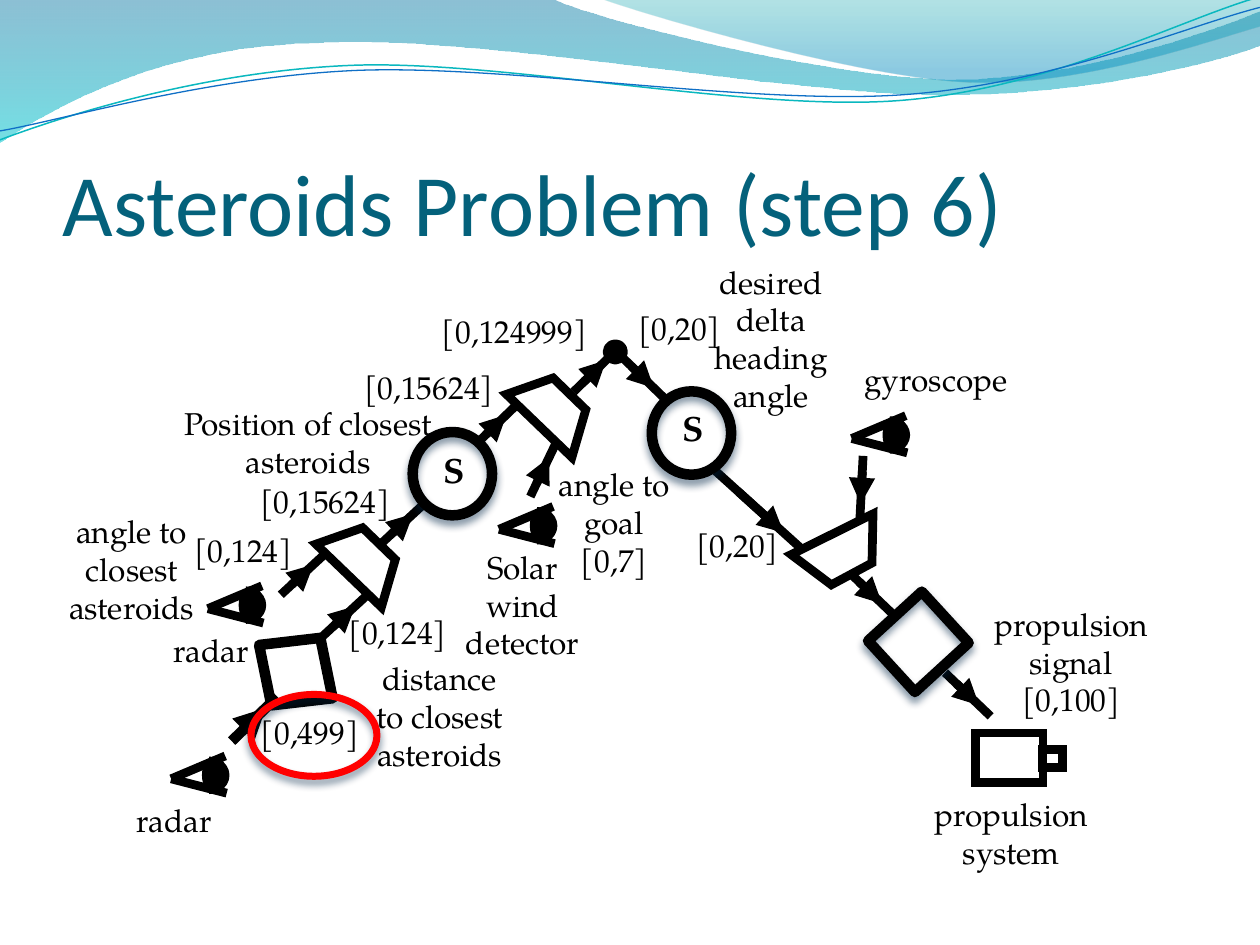
from lxml import etree
from pptx import Presentation
from pptx.dml.color import RGBColor
from pptx.enum.shapes import MSO_CONNECTOR, MSO_SHAPE
from pptx.enum.text import MSO_ANCHOR, PP_ALIGN
from pptx.oxml.ns import qn
from pptx.util import Cm, Pt

STRAIGHT = MSO_CONNECTOR.STRAIGHT
OVAL, RECT = MSO_SHAPE.OVAL, MSO_SHAPE.RECTANGLE
DIAMOND, ARC = MSO_SHAPE.DIAMOND, MSO_SHAPE.ARC
LEFT, CENTER = PP_ALIGN.LEFT, PP_ALIGN.CENTER
BLACK, WHITE = RGBColor(0, 0, 0), RGBColor(255, 255, 255)
RED = RGBColor(255, 0, 0)
TITLE_BLUE, SHADOW = RGBColor(0x04, 0x61, 0x7B), RGBColor(0x04, 0x27, 0x47)
DEEP_BLUE, AQUA = RGBColor(0x00, 0x74, 0xA1), RGBColor(0x00, 0xC6, 0xCF)
TEAL, SKY = RGBColor(0x00, 0xA1, 0xA9), RGBColor(0x00, 0x8B, 0xBF)
LINE_TEAL, LINE_BLUE = RGBColor(0x0A, 0xB8, 0xBF), RGBColor(0x0F, 0x6F, 0xC6)
BODY_FONT = "TeX Gyre Pagella"

prs = Presentation()
prs.slide_width, prs.slide_height = Cm(25.4), Cm(19.05)
slide = prs.slides.add_slide(prs.slide_layouts[6])
shapes = slide.shapes


def add_outline(start, steps, closed):
    """Draw a freeform; a step is one point (line) or three (Bézier curve)."""
    points = [(Cm(x), Cm(y)) for x, y in [start] + [pt for step in steps for pt in step]]
    builder = shapes.build_freeform(*points[0])
    builder.add_line_segments(points[1:], close=closed)
    s = builder.convert_to_shape()
    s.shadow.inherit = False
    segments = iter(list(s._element.iter(qn("a:lnTo"))))
    for step in steps:
        parts = [next(segments) for _ in step]
        if len(step) == 3:
            curve = etree.Element(qn("a:cubicBezTo"))
            parts[0].addprevious(curve)
            for part in parts:
                curve.append(part[0])
                part.getparent().remove(part)
    return s


def add_line(x1, y1, x2, y2, width, arrow=False):
    c = shapes.add_connector(STRAIGHT, Cm(x1), Cm(y1), Cm(x2), Cm(y2))
    c.line.color.rgb, c.line.width = BLACK, Pt(width)
    if arrow:
        etree.SubElement(c.line._get_or_add_ln(), qn("a:tailEnd"), type="triangle")
    etree.SubElement(c._element.spPr, qn("a:effectLst"))


# Waves across the top
waves = [
    ((0, 0), [((11.18, 0),),
              ((12.09, 0.43), (16.87, 1.6), (19.25, 1.6)),
              ((21.67, 1.6), (24.33, 0.66), (25.4, 0.23)),
              ((25.4, 0.91),),
              ((24.97, 1.12), (22.1, 1.93), (18.95, 1.91)),
              ((15.8, 1.91), (9.7, 0.71), (6.53, 0.86)),
              ((3.28, 0.91), (1.17, 2.11), (0, 2.87))],
     [(0, DEEP_BLUE, 45), (1, AQUA, 55)]),
    ((12.17, 0), [((12.93, 0.28), (17.32, 1.57), (19.53, 1.65)),
                  ((21.74, 1.75), (24.41, 0.81), (25.4, 0.53)),
                  ((25.4, 0),)],
     [(0, TEAL, 30), (0.8, SKY, 45)]),
]
for start, steps, stops in waves:
    s = add_outline(start, steps, True)
    s.line.fill.background()
    s.fill.gradient()
    s.fill.gradient_angle = 270
    for stop, (position, color, _) in zip(s.fill.gradient_stops, stops):
        stop.position, stop.color.rgb = position, color
    for clr, (_, _, opacity) in zip(s._element.spPr.iter(qn("a:srgbClr")), stops):
        etree.SubElement(clr, qn("a:alpha"), val=str(opacity * 1000))

wave_lines = [
    ((0, 2.82), [((1.22, 2.36), (4.01, 1.45), (7.04, 1.32)),
                 ((10.03, 1.19), (15.06, 2.26), (18.11, 2.03)),
                 ((21.16, 1.8), (23.83, 0.38), (25.35, -0.05))], LINE_TEAL, 0.85),
    ((0, 2.64), [((1.19, 2.44), (4.17, 1.55), (7.19, 1.42)),
                 ((10.24, 1.3), (15.16, 2.13), (18.21, 1.91)),
                 ((21.23, 1.7), (23.9, 0.53), (25.4, 0.15))], LINE_BLUE, 0.75),
]
for start, steps, color, width in wave_lines:
    s = add_outline(start, steps, False)
    s.fill.background()
    s.line.color.rgb, s.line.width = color, Pt(width)

# Title
tb = shapes.add_textbox(Cm(1.27), Cm(1.96), Cm(22.86), Cm(3.17))
tf = tb.text_frame
tf.word_wrap, tf.vertical_anchor = True, MSO_ANCHOR.BOTTOM
tf.margin_left = tf.margin_right = tf.margin_bottom = 0
tf.text = "Asteroids Problem (step 6)"
font = tf.paragraphs[0].runs[0].font
font.name, font.size, font.color.rgb = "Calibri", Pt(50), TITLE_BLUE

# Links: an arrow, then the same line a third further on, so the head sits midway
links = [
    (11.56, 7.9, 12.22, 7.26, 5), (12.5, 7.16, 13.18, 7.82, 5),
    (17.09, 11.51, 17.78, 12.17, 5), (19.05, 13.56, 19.74, 14.22, 5),
    (10.69, 10.01, 11.07, 9.22, 5), (9.58, 8.97, 10.21, 8.36, 5),
    (7.67, 10.97, 8.33, 10.36, 5), (17.4, 9.19, 17.35, 10.16, 5),
    (14.43, 9.5, 15.8, 10.74, 5), (4.67, 14.94, 5.36, 14.27, 6),
    (6.5, 12.83, 7.16, 12.22, 5), (5.66, 11.99, 6.32, 11.38, 5),
]
for x1, y1, x2, y2, width in links:
    dx, dy = (x2 - x1) / 3, (y2 - y1) / 3
    add_line(x1, y1, x2, y2, width, arrow=True)
    add_line(x1 + dx, y1 + dy, x2 + dx, y2 + dy, width)

# Funnels
upper = [(11.53, 9.22), (11.81, 8.26), (11.15, 7.62), (10.21, 7.95)]
lower = [(x - 3.84, y + 3.02) for x, y in upper]
right = [(15.95, 11.18), (16.76, 11.79), (17.58, 11.35), (17.6, 10.36)]
for corners in (upper, lower, right):
    s = add_outline(corners[0], [(corner,) for corner in corners[1:]], True)
    s.fill.solid()
    s.fill.fore_color.rgb = WHITE
    s.line.color.rgb, s.line.width = BLACK, Pt(5)
    etree.SubElement(s.line._get_or_add_ln(), qn("a:miter"), lim="800000")

# Nodes: kind, left, top, width, height, rotation, fill, line colour, line width, shadow
nodes = [
    (OVAL, 12.24, 6.93, 0.33, 0.33, 0, BLACK, BLACK, 5, False),
    (RECT, 19.66, 14.78, 1.37, 0.99, 0, WHITE, BLACK, 5, False),
    (RECT, 21.01, 15.11, 0.41, 0.36, 0, WHITE, BLACK, 5, False),
    (RECT, 17.78, 12.24, 1.47, 1.4, 317.5, None, BLACK, 6, True),
    (OVAL, 13.14, 7.89, 1.6, 1.68, 0, None, BLACK, 6, True),
    (OVAL, 8.32, 8.71, 1.6, 1.68, 0, None, BLACK, 6, True),
    (DIAMOND, 5.05, 12.7, 1.83, 1.68, 35.9, None, BLACK, 6, False),
    (OVAL, 5.06, 14, 2.54, 1.65, 0, None, RED, 4, True),
]
# Eyes: two lids from the tip, a curved front and a pupil
for x, y in [(10.06, 10.67), (17.17, 8.84), (3.45, 15.7), (4.19, 12.27)]:
    add_line(x + 1.09, y - 0.46, x, y, 5)
    add_line(x, y, x + 1.12, y + 0.29, 5)
    nodes.append((ARC, x + 0.43, y - 0.36, 0.66, 0.58, 0, None, BLACK, 5, False))
    nodes.append((OVAL, x + 0.71, y - 0.36, 0.33, 0.58, 0, BLACK, BLACK, 5, False))

for kind, x, y, w, h, rotation, fill, color, width, shadow in nodes:
    s = shapes.add_shape(kind, Cm(x), Cm(y), Cm(w), Cm(h))
    s.shadow.inherit = False
    s.rotation = rotation
    s.line.color.rgb, s.line.width = color, Pt(width)
    if kind == ARC:
        s.adjustments[1] = 54  # ends at 90 degrees
    if kind == RECT and not rotation:
        etree.SubElement(s.line._get_or_add_ln(), qn("a:miter"), lim="800000")
    if fill is None:
        s.fill.background()
    else:
        s.fill.solid()
        s.fill.fore_color.rgb = fill
    if shadow:
        effects = s._element.spPr.find(qn("a:effectLst"))
        outer = etree.SubElement(effects, qn("a:outerShdw"), blurRad=str(Pt(4.5)),
                                 dist=str(Pt(3)), dir="5400000", rotWithShape="0")
        clr = etree.SubElement(outer, qn("a:srgbClr"), val=str(SHADOW))
        etree.SubElement(clr, qn("a:alpha"), val="48000")

# Labels
labels = [
    ("S", 13.51, 8.08, 1.37, 1.12, LEFT),
    ("S", 8.69, 8.92, 1.37, 1.12, LEFT),
    ("radar", 3.25, 12.6, 3.2, 1.02, LEFT),
    ("radar", 2.51, 16.03, 3.2, 1.02, LEFT),
    ("gyroscope", 17.17, 7.14, 3.51, 1.02, LEFT),
    ("[0,20]", 12.62, 6.1, 2.39, 1.02, LEFT),
    ("[0,20]", 13.79, 10.48, 2.9, 1.02, LEFT),
    ("[0,15624]", 5, 9.6, 3.66, 1.02, LEFT),
    ("[0,15624]", 7.09, 7.29, 3.66, 1.02, LEFT),
    ("[0,124]", 3.67, 10.59, 3.66, 1.02, LEFT),
    ("[0,124]", 6.78, 12.24, 3.66, 1.02, LEFT),
    ("[0,499]", 5.01, 14.25, 3.66, 1.02, LEFT),
    ("[0,124999]", 8.66, 6.17, 3.45, 1.02, LEFT),
    ("desired delta heading angle", 13.73, 5.17, 3.63, 3.33, CENTER),
    ("Position of closest asteroids", 2.64, 8.03, 7.14, 1.8, CENTER),
    ("angle to goal\n[0,7]", 10.93, 9.25, 2.9, 2.57, CENTER),
    ("propulsion system", 17.92, 15.9, 4.93, 1.8, CENTER),
    ("propulsion signal\n[0,100]", 19.6, 12.07, 3.99, 2.57, CENTER),
    ("Solar wind detector", 9.1, 10.92, 2.87, 2.57, CENTER),
    ("distance to closest asteroids", 7.24, 13.16, 3.25, 2.57, CENTER),
    ("angle to closest asteroids", 1.03, 10.2, 3.25, 2.57, CENTER),
]
for text, x, y, w, h, align in labels:
    tf = shapes.add_textbox(Cm(x), Cm(y), Cm(w), Cm(h)).text_frame
    tf.word_wrap = True
    tf.text = text
    for p in tf.paragraphs:
        p.alignment = align
        font = p.runs[0].font
        font.name, font.size, font.color.rgb = BODY_FONT, Pt(18), BLACK
        if text == "S":
            font.size, font.bold = Pt(20), True

prs.save("out.pptx")
